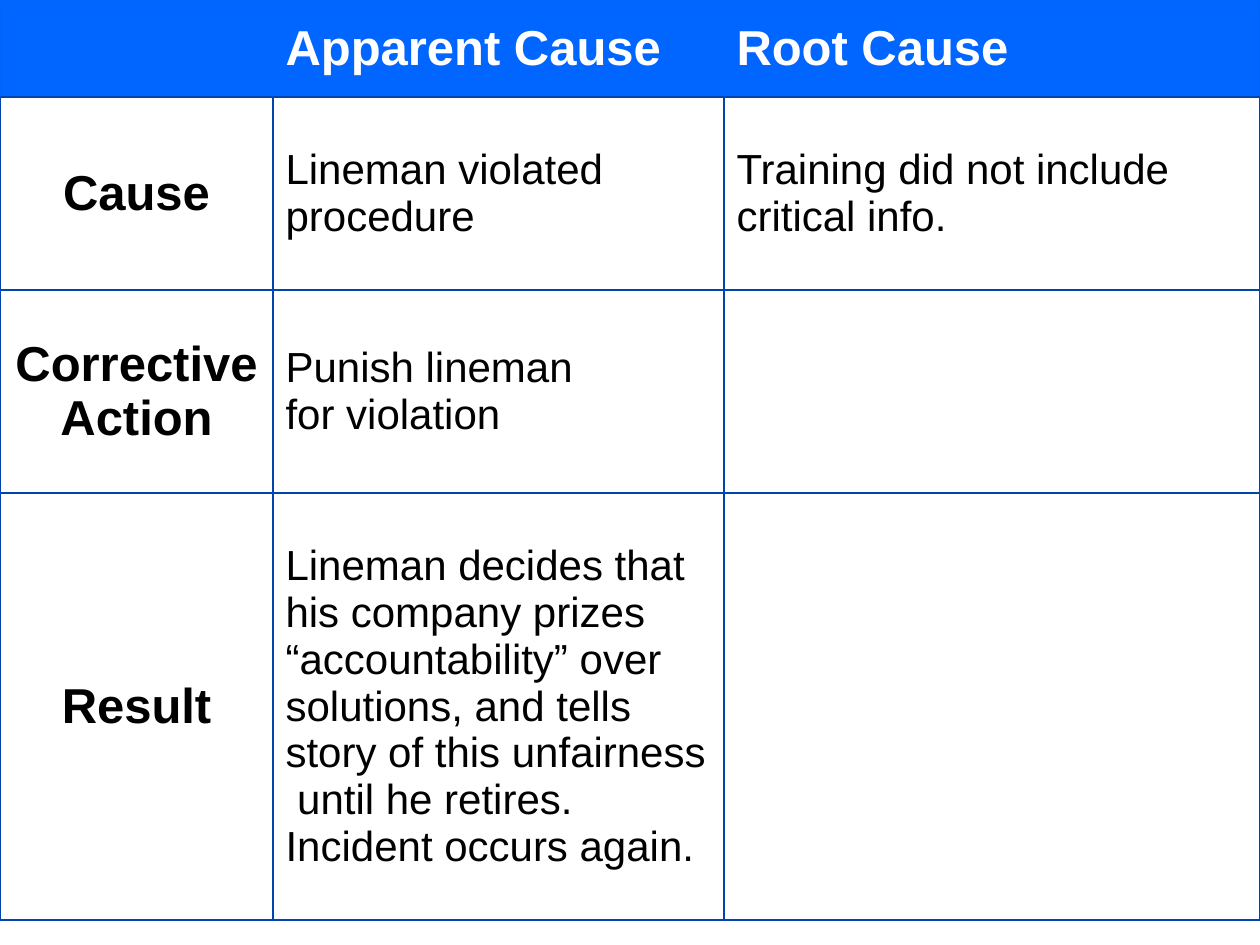
"""Build a slide with a table comparing apparent cause and root cause."""
from dataclasses import dataclass

from lxml import etree
from pptx import Presentation
from pptx import util as u
from pptx.dml.color import RGBColor
from pptx.enum import text
from pptx.oxml.ns import qn

PX = 914400 / 126
COLUMNS = (273, 451, 536)
ROWS = (97, 193, 203, 427)
BLUE, EDGE, NAVY = "0066FF", "0064F9", "0045AD"
WHITE, BLACK = "FFFFFF", "000000"


@dataclass(frozen=True)
class Style:
    size: int
    bold: bool
    color: str
    fill: str
    align: text.PP_ALIGN = text.PP_ALIGN.LEFT


HEADER = Style(28, True, WHITE, BLUE)
LABEL = Style(28, True, BLACK, WHITE, text.PP_ALIGN.CENTER)
BODY = Style(24, False, BLACK, WHITE)

CONTENT = (
    ("", "Apparent Cause", "Root Cause"),
    ("Cause", "Lineman violated procedure", "Training did not include critical info."),
    ("Corrective Action", "Punish lineman\nfor violation", ""),
    (
        "Result",
        "Lineman decides that his company prizes “accountability” over solutions, "
        "and tells story of this unfairness  until he retires.\nIncident occurs again.",
        "",
    ),
)


def px(length: int) -> u.Emu:
    return u.Emu(round(length * PX))


def rgb(color: str) -> RGBColor:
    return RGBColor.from_string(color)


def style_for(row: int, column: int) -> Style:
    if row == 0:
        return HEADER
    return LABEL if column == 0 else BODY


def borders_for(row: int, column: int) -> dict[str, tuple[str, float] | None]:
    inner, outer = (NAVY, 1), (EDGE, 0.75)
    if row:
        return dict.fromkeys("LRTB", inner)
    return {
        "L": outer if column == 0 else None,
        "R": outer if column == len(COLUMNS) - 1 else None,
        "T": outer,
        "B": inner,
    }


def draw_border(cell, side: str, border: tuple[str, float] | None) -> None:
    properties = cell._tc.get_or_add_tcPr()
    line = etree.SubElement(properties, qn(f"a:ln{side}"))
    if border is None:
        line.set("w", "0")
        etree.SubElement(line, qn("a:noFill"))
        return
    color, width = border
    line.set("w", str(u.Pt(width)))
    fill = etree.SubElement(line, qn("a:solidFill"))
    etree.SubElement(fill, qn("a:srgbClr"), val=color)


def fill_cell(cell, words: str, style: Style) -> None:
    cell.fill.solid()
    cell.fill.fore_color.rgb = rgb(style.fill)
    cell.vertical_anchor = text.MSO_ANCHOR.MIDDLE
    cell.text = words
    for para in cell.text_frame.paragraphs:
        para.alignment = style.align
        para.font.name = "Arial"
        para.font.size = u.Pt(style.size)
        para.font.bold = style.bold
        para.font.color.rgb = rgb(style.color)


def draw_table(page) -> None:
    frame = page.shapes.add_table(
        len(ROWS), len(COLUMNS), 0, 0, px(sum(COLUMNS)), px(sum(ROWS))
    )
    table = frame.table
    table.first_row = table.horz_banding = False
    for column, width in zip(table.columns, COLUMNS):
        column.width = px(width)
    for row, height in zip(table.rows, ROWS):
        row.height = px(height)
    for i, row_words in enumerate(CONTENT):
        for j, words in enumerate(row_words):
            cell = table.cell(i, j)
            for side, border in borders_for(i, j).items():
                draw_border(cell, side, border)
            fill_cell(cell, words, style_for(i, j))


def main() -> None:
    deck = Presentation()
    deck.slide_width, deck.slide_height = px(1260), px(945)
    page = deck.slides.add_slide(deck.slide_layouts[6])
    draw_table(page)
    deck.save("out.pptx")


if __name__ == "__main__":
    main()
